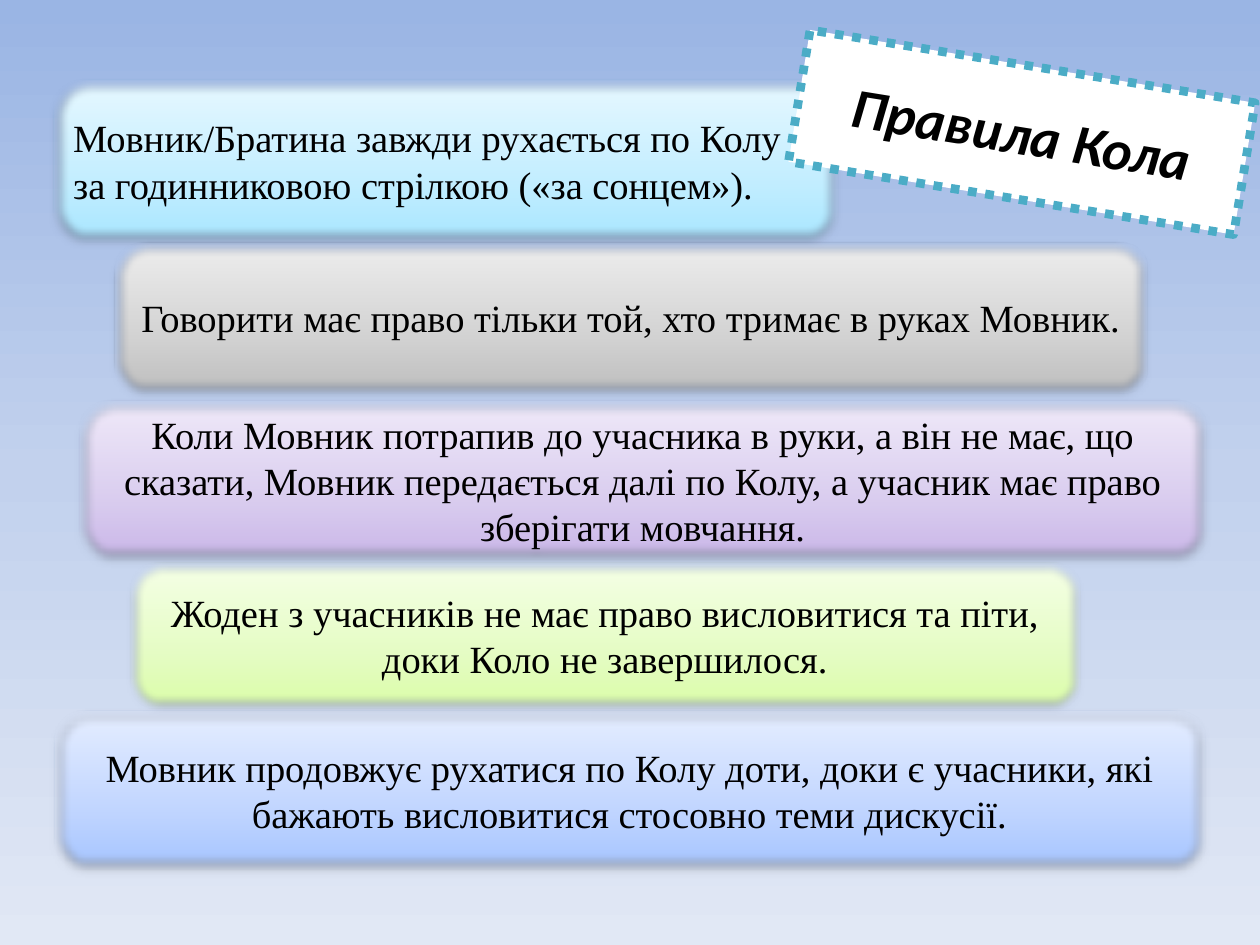
"""Build the slide with the rules of the talking circle."""
from dataclasses import dataclass

from lxml import etree
from pptx import Presentation
from pptx import util as u
from pptx.dml.color import RGBColor
from pptx.enum import dml, shapes, text
from pptx.oxml.ns import qn

COLORS = {"ink": "000000", "paper": "FFFFFF", "title_border": "4BACC6"}
SKY = ((0, "9AB5E4"), (50, "C2D1ED"), (100, "E1E8F5"))
LEFT, CENTER = text.PP_ALIGN.LEFT, text.PP_ALIGN.CENTER


@dataclass
class Rule:
    wording: str
    left: float
    top: float
    width: float
    height: float
    tints: tuple[str, str, str]
    border: str
    align: text.PP_ALIGN = CENTER


RULES = [
    Rule("Мовник/Братина завжди рухається по Колу за годинниковою стрілкою («за сонцем»).",
         0.42, 0.63, 6.23, 1.29, ("A7E6FF", "C1EDFF", "E7F8FF"), "46AAC5", LEFT),
    Rule("Мовник продовжує рухатися по Колу доти, доки є учасники, які бажають "
         "висловитися стосовно теми дискусії.",
         0.43, 5.64, 9.13, 1.26, ("A4C4FF", "BFD4FF", "E6EEFF"), "4B7EBC"),
    Rule("Жоден з учасників не має право висловитися та піти, доки Коло не завершилося.",
         1.03, 4.46, 7.54, 1.16, ("DAFDA7", "E4FCC2", "F5FFE7"), "98B955"),
    Rule("Коли Мовник потрапив до учасника в руки, а він не має, що сказати, Мовник "
         "передається далі по Колу, а учасник має право зберігати мовчання.",
         0.63, 3.18, 8.94, 1.26, ("C9B5E8", "D8CBEE", "F0EAF9"), "7D60A0"),
    Rule("Говорити має право тільки той, хто тримає в руках Мовник.",
         0.91, 1.92, 8.19, 1.2, ("BDBDBD", "D1D1D1", "EEEEEE"), "000000"),
]


def add_node(parent, tag: str, **attributes):
    return etree.SubElement(parent, qn(tag), {k: str(v) for k, v in attributes.items()})


def set_gradient(fill, owner, stops, angle: int) -> None:
    fill.gradient()
    fill.gradient_angle = angle
    stop_list = owner.xpath(".//a:gsLst")[0]
    for default_stop in list(stop_list):
        stop_list.remove(default_stop)
    for percent, color in stops:
        stop = add_node(stop_list, "a:gs", pos=percent * 1000)
        add_node(stop, "a:srgbClr", val=color)


def add_soft_shadow(shape) -> None:
    shape.shadow.inherit = False
    effects = shape.element.spPr.find(qn("a:effectLst"))
    shadow = add_node(effects, "a:outerShdw", blurRad=u.Pt(3.1), dist=u.Pt(1.6),
                      dir=90 * 60000, rotWithShape=0)
    black = add_node(shadow, "a:srgbClr", val=COLORS["ink"])
    add_node(black, "a:alpha", val=38000)
    add_node(effects, "a:softEdge", rad=u.Pt(5))


def write(shape, wording: str, *, font: str, size: float, align: text.PP_ALIGN = CENTER,
          bold: bool = False, italic: bool = False) -> None:
    frame = shape.text_frame
    frame.word_wrap = True
    frame.auto_size = text.MSO_AUTO_SIZE.NONE
    frame.vertical_anchor = text.MSO_ANCHOR.MIDDLE
    paragraph = frame.paragraphs[0]
    paragraph.alignment = align
    run = paragraph.add_run()
    run.text = wording
    run.font.name, run.font.size = font, u.Pt(size)
    run.font.bold, run.font.italic = bold, italic
    run.font.color.rgb = RGBColor.from_string(COLORS["ink"])


def set_border(shape, color: str, width: float) -> None:
    shape.line.color.rgb = RGBColor.from_string(color)
    shape.line.width = u.Pt(width)


def draw_rule(slide, rule: Rule) -> None:
    card = slide.shapes.add_shape(
        shapes.MSO_SHAPE.ROUNDED_RECTANGLE, u.Inches(rule.left), u.Inches(rule.top),
        u.Inches(rule.width), u.Inches(rule.height))
    set_gradient(card.fill, card.element, zip((0, 35, 100), rule.tints), 90)
    set_border(card, rule.border, 0.75)
    add_soft_shadow(card)
    write(card, rule.wording, font="Times New Roman", size=22, align=rule.align)


def draw_title(slide, wording: str) -> None:
    title = slide.shapes.title
    title.left, title.top = u.Inches(6.32), u.Inches(0.52)
    title.width, title.height = u.Inches(3.58), u.Inches(1.06)
    title.rotation = 9.3
    outline = add_node(title.element.spPr, "a:prstGeom", prst="roundRect")
    add_node(outline, "a:avLst")
    title.fill.solid()
    title.fill.fore_color.rgb = RGBColor.from_string(COLORS["paper"])
    set_border(title, COLORS["title_border"], 5)
    title.line.dash_style = dml.MSO_LINE.ROUND_DOT
    write(title, wording, font="Calibri", size=32, bold=True, italic=True)
    title.element.getparent().append(title.element)


def main() -> None:
    deck = Presentation()
    deck.slide_width, deck.slide_height = u.Inches(10), u.Inches(7.5)
    slide = deck.slides.add_slide(deck.slide_layouts[5])
    set_gradient(slide.background.fill, slide.element, SKY, 270)
    for rule in RULES:
        draw_rule(slide, rule)
    draw_title(slide, "Правила Кола")
    deck.save("out.pptx")


if __name__ == "__main__":
    main()
